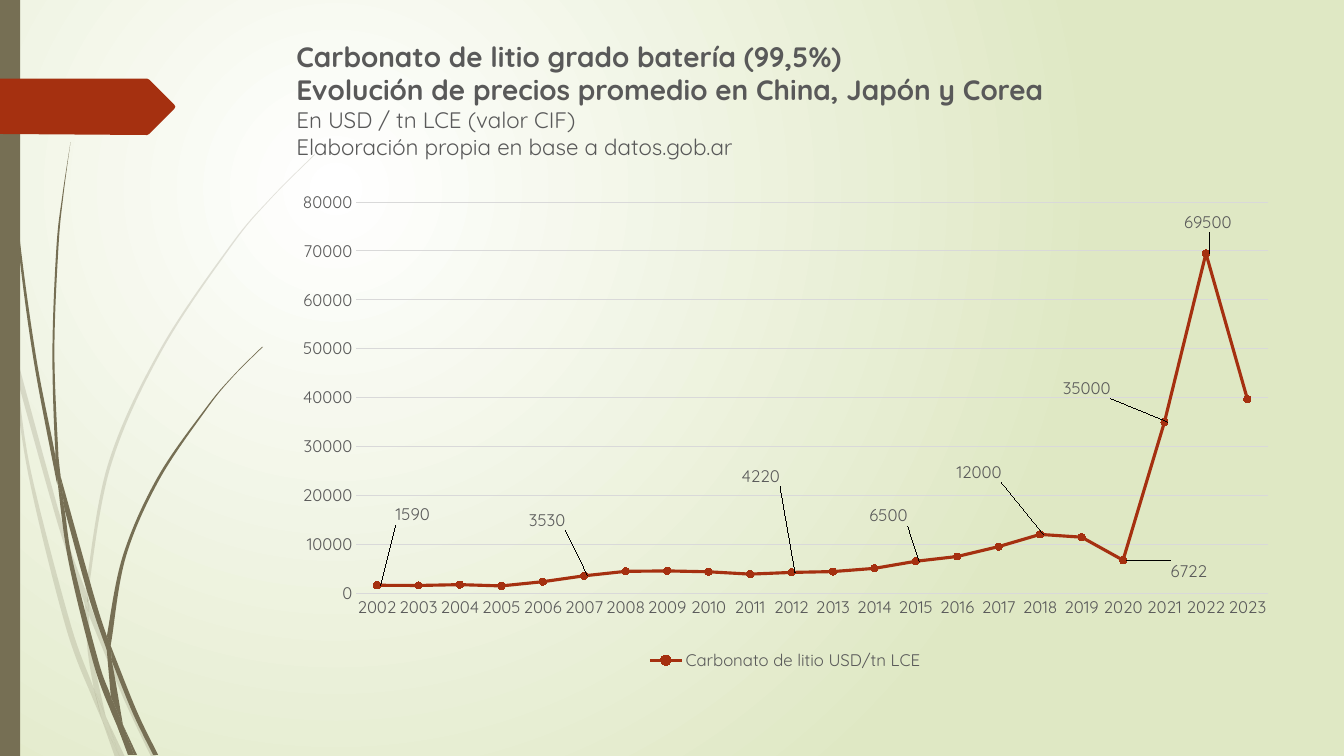
from lxml.etree import SubElement
from pptx import Presentation
from pptx.chart.data import CategoryChartData
from pptx.dml.color import RGBColor
from pptx.enum.chart import (XL_CHART_TYPE, XL_LABEL_POSITION, XL_LEGEND_POSITION,
                             XL_MARKER_STYLE, XL_TICK_MARK)
from pptx.enum.shapes import MSO_SHAPE
from pptx.enum.text import MSO_ANCHOR, MSO_AUTO_SIZE, PP_ALIGN
from pptx.oxml import parse_xml
from pptx.oxml.ns import qn
from pptx.util import Pt

COLORS = {"white": "FFFFFF", "meadow": "DFE8C4", "stem": "766F54",
          "brick": "A53010", "text": "595959", "grid": "D9D9D9"}
FONT = "Quicksand"
GRID_UNIT = 0.72
PALE_BLADES = [
    ([(0, 282), (9, 322), (11, 350)], [(10, 344), (0, 299)]),
    ([(14, 345), (62, 520), (85, 586)], [(84, 599), (58, 522), (17, 376)]),
    ([(88, 596), (92, 607), (127, 692), (155, 751)], [(150, 751), (123, 694), (88, 610)]),
    ([(105, 711), (124, 751)], [(119, 751), (105, 711)]),
    ([(11, 350), (17, 376), (31, 469), (70, 619), (93, 683), (101, 714)],
     [(92, 693), (65, 621), (28, 470), (11, 350)]),
    ([(84, 599), (88, 610), (91, 646), (105, 711)], [(93, 683), (87, 646), (84, 599)]),
    ([(312, 153), (268, 197), (228, 244), (158, 348), (107, 461), (85, 584)],
     [(88, 596), (88, 584), (110, 462), (160, 349), (229, 245), (268, 198), (312, 154)]),
    ([(101, 714), (114, 751)], [(119, 751), (101, 714)]),
    ([(85, 586), (88, 596), (88, 610)], [(88, 608), (84, 599)]),
    ([(93, 683), (105, 711), (119, 751)], [(101, 714), (93, 683)]),
]
DARK_BLADES = [
    ([(4, 0), (4, 48), (8, 109), (19, 232), (36, 355), (55, 453), (57, 481)],
     [(56, 477), (33, 355), (17, 233), (7, 110), (4, 48), (3, 0)]),
    ([(60, 472), (93, 590), (106, 631)], [(106, 645), (88, 592), (64, 505)]),
    ([(110, 641), (136, 706), (157, 749)], [(152, 749), (132, 708), (111, 656)]),
    ([(57, 477), (64, 505), (72, 556), (98, 657), (110, 691), (117, 722)],
     [(111, 708), (93, 659), (68, 557), (57, 477)]),
    ([(70, 141), (62, 193), (56, 245), (52, 349), (55, 449), (60, 472)],
     [(58, 453), (54, 349), (58, 245), (63, 193), (70, 141)]),
    ([(122, 719), (136, 749)], [(133, 749), (122, 719)]),
    ([(55, 449), (60, 472), (64, 505)], [(57, 477), (55, 453)]),
    ([(260, 344), (231, 373), (204, 405), (156, 474), (122, 551), (106, 631)],
     [(110, 641), (111, 633), (125, 552), (158, 476), (205, 406), (231, 374), (261, 344)]),
    ([(117, 722), (131, 749)], [(127, 749), (117, 722)]),
    ([(106, 645), (111, 656), (122, 719)], [(110, 691), (106, 645)]),
    ([(106, 631), (110, 641), (111, 656)], [(106, 645), (106, 631)]),
    ([(110, 691), (122, 719), (133, 749)], [(130, 749), (117, 722), (110, 691)]),
]
ARROW = [(0, 78), (146, 78), (148, 79), (173, 104), (174, 106), (173, 108),
         (148, 133), (146, 134), (0, 133)]
TITLE_LINES = [("Carbonato de litio grado batería (99,5%)", 20, True),
               ("Evolución de precios promedio en China, Japón y Corea", 20, True),
               ("En USD / tn LCE (valor CIF)", 16, False),
               ("Elaboración propia en base a datos.gob.ar", 16, False)]
YEARS = [str(year) for year in range(2002, 2024)]
PRICES = [1590, 1550, 1720, 1460, 2320, 3530, 4440, 4530, 4350, 3870, 4220, 4390,
          5050, 6500, 7475, 9500, 12000, 11428, 6722, 35000, 69500, 39690]
CHART_WIDTH, CHART_HEIGHT = 714.2, 347
LABEL_OFFSETS = {"2002": (8, -50.6), "2007": (-45, -40), "2012": (-41, -68.7),
                 "2015": (-38.5, -32.6), "2018": (-65, -44.4), "2020": (28.6, 7.6),
                 "2021": (-78, -24.3), "2022": (-21, -22.2)}
PLOT_AREA = {"layoutTarget": "inner", "xMode": "edge", "yMode": "edge",
             "x": 0.071, "y": 0.027, "w": 0.912, "h": 0.805}
LEADER_LINES = (
    '<c:extLst xmlns:c="http://schemas.openxmlformats.org/drawingml/2006/chart">'
    '<c:ext uri="{CE6537A1-D6FC-4f65-9D91-7224C49458BB}" '
    'xmlns:c15="http://schemas.microsoft.com/office/drawing/2012/chart">'
    '<c15:showLeaderLines val="1"/></c:ext></c:extLst>')
RADIAL = ('<a:path xmlns:a="http://schemas.openxmlformats.org/drawingml/2006/main" '
          'path="circle"><a:fillToRect l="50000" t="50000" r="100000" b="100000"/></a:path>')


def color(name):
    """Return the named colour."""
    return RGBColor.from_string(COLORS[name])


def assign(target, **formats):
    """Set every given format value on the target."""
    for name, value in formats.items():
        setattr(target, name, value)


def handles(points):
    """Return two handles and an end point for each step of a smooth edge."""
    padded = [points[0], *points, points[-1]]
    curve = []
    for a, b, c, d in zip(padded, padded[1:], padded[2:], padded[3:]):
        curve.append(tuple(q + (r - p) / 6 for p, q, r in zip(a, b, c)))
        curve.append(tuple(r - (s - q) / 6 for q, r, s in zip(b, c, d)))
        curve.append(c)
    return curve


def place(parent, position, values):
    """Insert a manual layout in a chart element."""
    for layout in parent.findall(qn("c:layout")):
        parent.remove(layout)
    layout = parent.makeelement(qn("c:layout"), {})
    parent.insert(position, layout)
    manual = SubElement(layout, qn("c:manualLayout"))
    for name, value in values.items():
        SubElement(manual, qn(f"c:{name}"), val=str(value))


class PriceSlide:
    """Style and drawing methods for the current slide."""

    def __init__(self, deck):
        """Add a title-only page."""
        self.page = deck.slides.add_slide(deck.slide_layouts[5])

    def font(self, font, size, bold=False):
        """Apply the text style."""
        assign(font, name=FONT, size=Pt(size), bold=bold)
        font.color.rgb = color("text")

    def background(self):
        """Fill the page with a radial gradient."""
        fill = self.page.background.fill
        fill.gradient()
        for stop, name in zip(fill.gradient_stops, ("white", "meadow")):
            stop.color.rgb = color(name)
        gradient = self.page.element.find(".//" + qn("a:gradFill"))
        gradient.replace(gradient.find(qn("a:lin")), parse_xml(RADIAL))

    def paint(self, shape, name, opacity=100):
        """Give a shape a flat fill."""
        shape.shadow.inherit = False
        shape.line.fill.background()
        shape.fill.solid()
        shape.fill.fore_color.rgb = color(name)
        if opacity < 100:
            tone = shape.element.spPr.find(".//" + qn("a:srgbClr"))
            SubElement(tone, qn("a:alpha"), val=str(opacity * 1000))

    def band(self, left, top, width, height, name):
        """Draw a rectangle."""
        self.paint(self.page.shapes.add_shape(
            MSO_SHAPE.RECTANGLE, Pt(left), Pt(top), Pt(width), Pt(height)), name)

    def outline(self, points, name, opacity=100):
        """Draw a closed outline."""
        corners = [(Pt(x * GRID_UNIT), Pt(y * GRID_UNIT)) for x, y in points]
        builder = self.page.shapes.build_freeform(*corners[0])
        builder.add_line_segments(corners[1:], close=True)
        shape = builder.convert_to_shape()
        self.paint(shape, name, opacity)
        return shape

    def blade(self, edges, opacity=100):
        """Draw a grass blade between two curved edges."""
        near, far = edges
        points = [near[0], *handles(near), *handles([near[-1], far[0]]), *handles(far)]
        steps = list(self.outline(points, "stem", opacity).element.iter(qn("a:lnTo")))
        for first, second, end in zip(steps[::3], steps[1::3], steps[2::3]):
            first.tag = qn("a:cubicBezTo")
            for step in (second, end):
                first.append(step[0])
                step.getparent().remove(step)

    def title(self, left, top, width, height, lines):
        """Move and write the title."""
        box = self.page.shapes.title
        assign(box, left=Pt(left), top=Pt(top), width=Pt(width), height=Pt(height))
        assign(box.text_frame, word_wrap=True, auto_size=MSO_AUTO_SIZE.NONE,
               vertical_anchor=MSO_ANCHOR.TOP)
        para = box.text_frame.paragraphs[0]
        para.alignment = PP_ALIGN.LEFT
        for index, (text, size, bold) in enumerate(lines):
            if index:
                para.add_line_break()
            span = para.add_run()
            span.text = text
            self.font(span.font, size, bold)

    def chart(self, left, top, width, height):
        """Draw the price line chart."""
        data = CategoryChartData()
        data.categories = YEARS
        data.add_series("Carbonato de litio USD/tn LCE", PRICES)
        chart = self.page.shapes.add_chart(
            XL_CHART_TYPE.LINE_MARKERS, Pt(left), Pt(top), Pt(width), Pt(height), data).chart
        assign(chart, has_title=False, has_legend=True)
        assign(chart.legend, position=XL_LEGEND_POSITION.BOTTOM, include_in_layout=False)
        place(chart.element.find(".//" + qn("c:plotArea")), 0, PLOT_AREA)
        years, prices = chart.category_axis, chart.value_axis
        for axis in (years, prices):
            assign(axis, major_tick_mark=XL_TICK_MARK.NONE, minor_tick_mark=XL_TICK_MARK.NONE)
        for part in (chart, chart.legend, years.tick_labels, prices.tick_labels):
            self.font(part.font, 12)
        assign(prices, minimum_scale=0, maximum_scale=80000, major_unit=10000)
        for line in (years.format.line, prices.major_gridlines.format.line):
            line.color.rgb = color("grid")
            line.width = Pt(0.75)
        prices.format.line.fill.background()
        chart.plots[0].vary_by_categories = False
        self.series(chart.plots[0].series[0])

    def series(self, series):
        """Style the price line and its labels."""
        series.smooth = False
        series.format.line.width = Pt(2.25)
        assign(series.marker, style=XL_MARKER_STYLE.CIRCLE, size=5)
        series.marker.format.fill.solid()
        for tone in (series.format.line.color, series.marker.format.line.color,
                     series.marker.format.fill.fore_color):
            tone.rgb = color("brick")
        series.data_labels.show_value = False
        self.font(series.data_labels.font, 12)
        for year in LABEL_OFFSETS:
            label = series.points[YEARS.index(year)].data_label
            self.font(label.font, 12)
            label.position = XL_LABEL_POSITION.RIGHT
        group = series.data_labels._element
        for item, (x, y) in zip(group.findall(qn("c:dLbl")), LABEL_OFFSETS.values()):
            place(item, 1, {"x": x / CHART_WIDTH, "y": y / CHART_HEIGHT})
        group.append(parse_xml(LEADER_LINES))


def main():
    """Build and save the deck."""
    deck = Presentation()
    assign(deck, slide_width=Pt(960), slide_height=Pt(540))
    slide = PriceSlide(deck)
    slide.background()
    for blades, opacity in ((PALE_BLADES, 20), (DARK_BLADES, 100)):
        for edges in blades:
            slide.blade(edges, opacity)
    slide.band(0, 0, 14.4, 540, "stem")
    slide.outline(ARROW, "brick")
    slide.title(204.5, 24.5, 702, 99.4, TITLE_LINES)
    slide.chart(203.8, 135, CHART_WIDTH, CHART_HEIGHT)
    deck.save("out.pptx")


if __name__ == "__main__":
    main()
